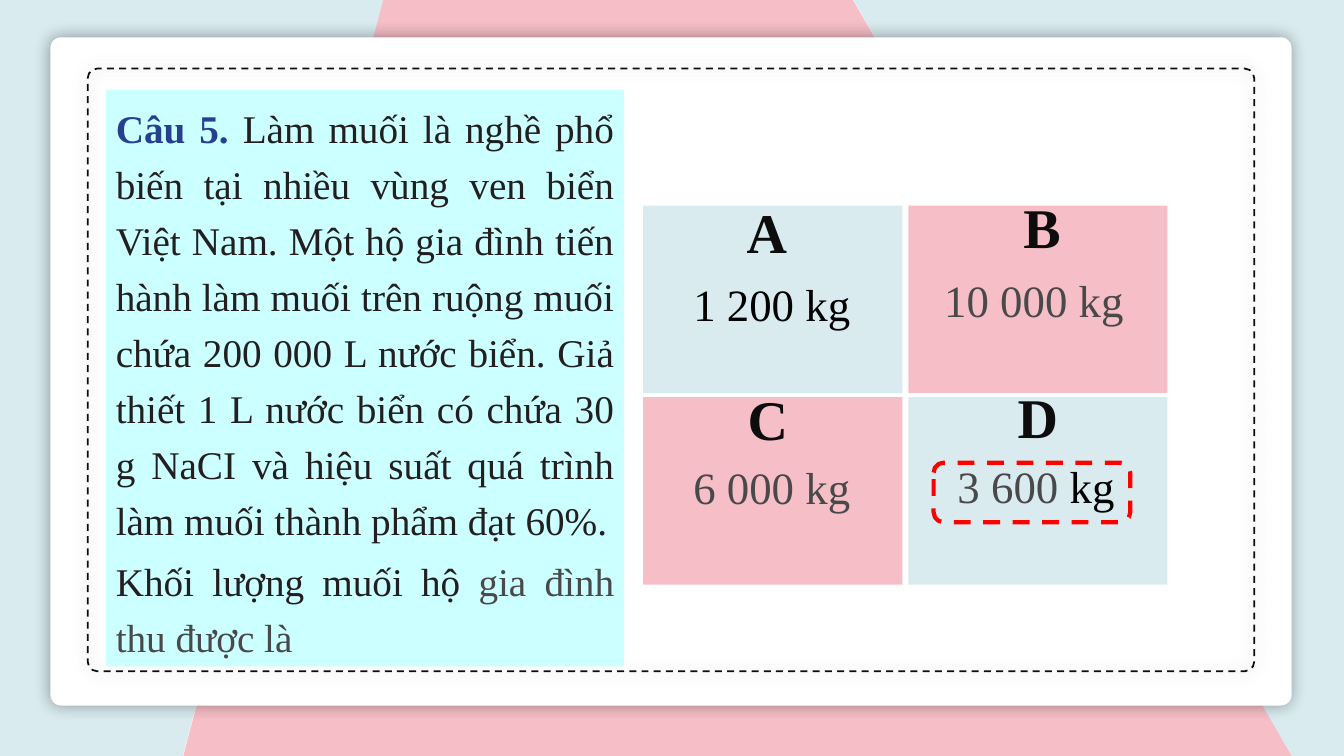
from dataclasses import dataclass

from lxml import etree
from pptx import Presentation
from pptx.dml.color import RGBColor
from pptx.enum import dml, shapes, text
from pptx.oxml import ns
from pptx.util import Inches, Pt

FONT = "Times New Roman"
BLUE, PINK, INK, GREY = "D9EBEF", "F6BEC7", "0D0D0D", "49494A"
RECT = shapes.MSO_SHAPE.RECTANGLE
ROUND = shapes.MSO_SHAPE.ROUNDED_RECTANGLE
Run = tuple[str, str, bool]  # text, colour, bold


@dataclass
class Band:
    points: list[tuple[float, float]]
    fill: str


@dataclass
class Answer:
    column: int
    row: int
    fill: str
    letter: str
    letter_at: tuple[float, float]
    value: list[Run]
    value_at: tuple[float, float]


BANDS = [
    Band([(0, -0.01), (3.81, -0.01), (1.81, 7.51), (0, 7.51)], BLUE),
    Band([(3.81, -0.03), (1.81, 7.53), (12.82, 7.51), (8.46, 0)], PINK),
    Band([(8.46, -0.01), (13.35, -0.01), (13.35, 7.51), (12.83, 7.53)], BLUE),
]
ANSWERS = [
    Answer(0, 0, BLUE, "A", (6.69, 1.91), [("1 200 kg", "000000", False)], (6.58, 2.95)),
    Answer(0, 1, PINK, "C", (6.7, 3.77), [("6 000 kg", GREY, False)], (6.58, 4.77)),
    Answer(1, 0, PINK, "B", (9.42, 1.86), [("10 000 kg", GREY, False)], (9.18, 2.91)),
    Answer(1, 1, BLUE, "D", (9.38, 3.75),
           [("3 600 ", GREY, False), ("kg", "000000", False)], (9.2, 4.76)),
]
QUESTION: list[list[Run]] = [
    [("Câu 5. ", "25408F", True),
     ("Làm muối là nghề phổ biến tại nhiều vùng ven biển Việt Nam. "
      "Một hộ gia đình tiến hành làm muối trên ruộng muối chứa 200 000 L nước biển. "
      "Giả thiết 1 L nước biển có chứa 30 g NaCI và hiệu suất quá trình "
      "làm muối thành phẩm đạt 60%.", "231F20", False)],
    [("Khối lượng muối hộ ", "231F20", False), ("gia đình thu được là", GREY, False)],
]


def rgb(value: str) -> RGBColor:
    return RGBColor.from_string(value)


def paint(sp, fill: str = "", line: str = "", width: float = 1) -> None:
    sp.shadow.inherit = False
    if fill:
        sp.fill.solid()
        sp.fill.fore_color.rgb = rgb(fill)
    else:
        sp.fill.background()
    if line:
        sp.line.color.rgb = rgb(line)
        sp.line.width = Pt(width)
        sp.line.dash_style = dml.MSO_LINE.DASH
    else:
        sp.line.fill.background()


def add_box(s, kind, x: float, y: float, w: float, h: float, **style):
    sp = s.shapes.add_shape(kind, Inches(x), Inches(y), Inches(w), Inches(h))
    paint(sp, **style)
    return sp


def add_glow(sp) -> None:
    """Soft black shadow around the whole shape."""
    effects = sp._element.spPr.find(ns.qn("a:effectLst"))
    shadow = etree.SubElement(effects, ns.qn("a:outerShdw"), blurRad=str(Pt(12)),
                              dist="0", dir="0", algn="ctr", rotWithShape="0")
    color = etree.SubElement(shadow, ns.qn("a:srgbClr"), val="000000")
    etree.SubElement(color, ns.qn("a:alpha"), val="37000")


def write(p, runs: list[Run], size: float, align) -> None:
    p.alignment = align
    p.font.name = FONT
    p.font.size = Pt(size)
    for words, color, bold in runs:
        r = p.add_run()
        r.text = words
        r.font.color.rgb = rgb(color)
        r.font.bold = bold


def add_label(s, at: tuple[float, float], w: float, h: float, runs: list[Run], size: float):
    sp = s.shapes.add_textbox(Inches(at[0]), Inches(at[1]), Inches(w), Inches(h))
    tf = sp.text_frame
    tf.word_wrap = True
    write(tf.paragraphs[0], runs, size, text.PP_ALIGN.CENTER)
    return tf.paragraphs[0]


def add_band(s, band: Band) -> None:
    points = [(Inches(x), Inches(y)) for x, y in band.points]
    builder = s.shapes.build_freeform(*points[0])
    builder.add_line_segments(points[1:], close=True)
    paint(builder.convert_to_shape(), fill=band.fill)


def add_answer(s, a: Answer) -> None:
    add_box(s, RECT, 6.38 + 2.63 * a.column, 2.04 + 1.9 * a.row, 2.57, 1.86, fill=a.fill)
    add_label(s, a.letter_at, 1.83, 0.77, [(a.letter, INK, True)], 40)
    p = add_label(s, a.value_at, 2.15, 0.42, a.value, 32)
    p.line_spacing = Pt(20)


def add_question(s) -> None:
    sp = add_box(s, RECT, 1.05, 0.89, 5.14, 5.72, fill="CCFFFF")
    tf = sp.text_frame
    tf.word_wrap = True
    for i, runs in enumerate(QUESTION):
        p = tf.add_paragraph() if i else tf.paragraphs[0]
        write(p, runs, 28, text.PP_ALIGN.JUSTIFY)
        p.line_spacing = 1.19
        p.space_after = Pt(4)


def main() -> None:
    prs = Presentation()
    prs.slide_width, prs.slide_height = Inches(13.33), Inches(7.5)
    s = prs.slides.add_slide(prs.slide_layouts[6])

    # Background bands
    for band in BANDS:
        add_band(s, band)

    # Card and its dashed frame
    card = add_box(s, ROUND, 0.5, 0.37, 12.31, 6.63, fill="FFFFFF")
    frame = add_box(s, ROUND, 0.87, 0.68, 11.57, 5.98, line=INK, width=1.25)
    for sp in (card, frame):
        sp.adjustments[0] = 0.016
        add_glow(sp)

    # Answers and question
    for answer in ANSWERS:
        add_answer(s, answer)
    add_question(s)

    # Mark around the right answer
    add_box(s, ROUND, 9.26, 4.59, 1.95, 0.59, line="FF0000", width=3)

    prs.save("out.pptx")


if __name__ == "__main__":
    main()
